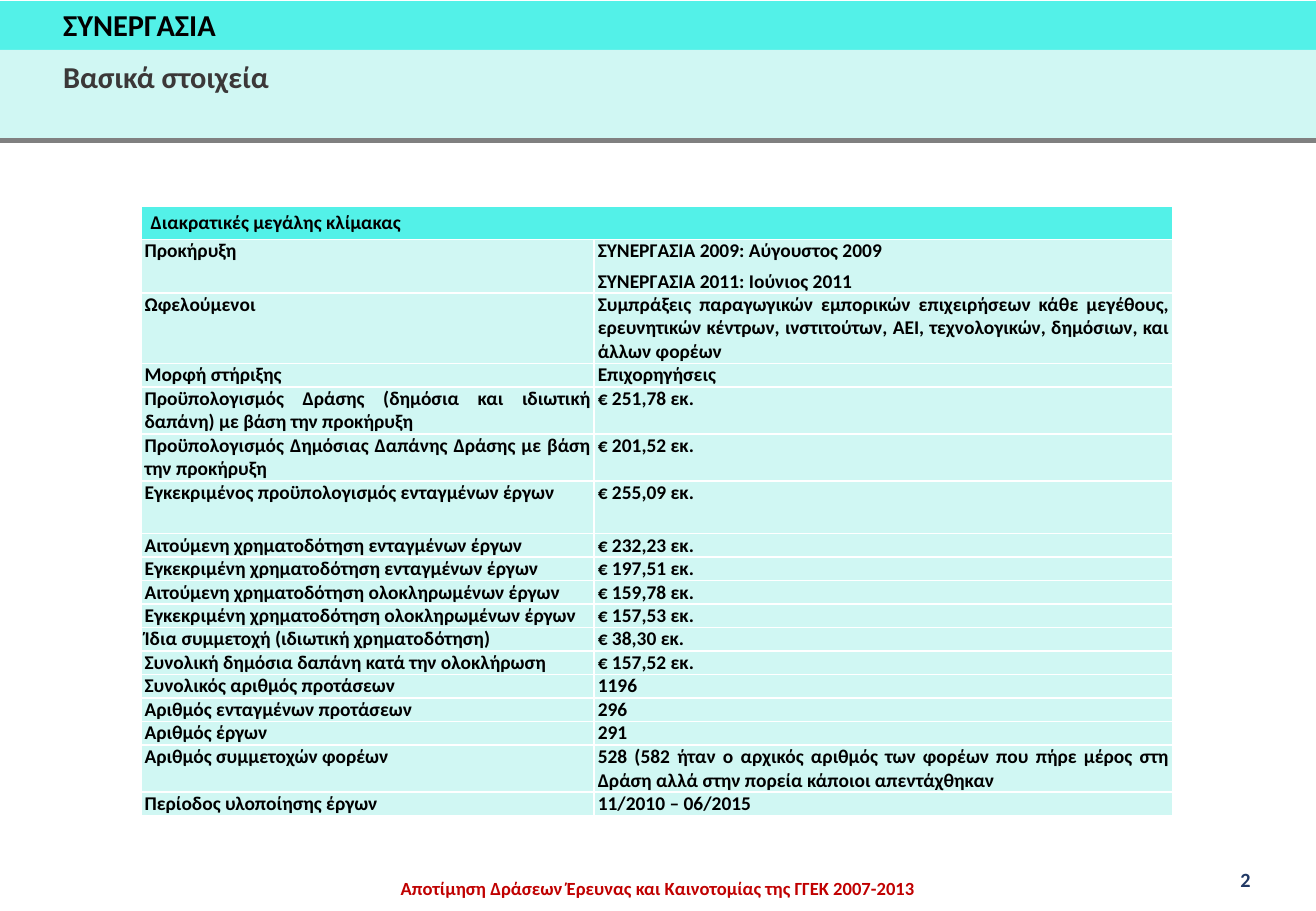
from dataclasses import dataclass

from lxml import etree
from pptx import Presentation
from pptx import util as u
from pptx.dml.color import RGBColor
from pptx.enum import shapes, text
from pptx.oxml.ns import qn


@dataclass(frozen=True)
class Theme:
    """Colours, type sizes and font of the slide."""
    font: str = "Calibri"
    strong: str = "53F1E8"
    pale: str = "D0F7F3"
    rule: str = "808080"
    border: str = "FFFFFF"
    ink: str = "000000"
    subtitle: str = "3B3838"
    footer: str = "C00000"
    number: str = "203864"
    heading_size: float = 18
    table_size: float = 11.5
    footer_size: float = 11
    number_size: float = 12


THEME = Theme()
WIDTH, HEIGHT = u.Inches(10.83), u.Inches(7.5)
LABEL_SHARE, VALUE_SHARE = 34.44, 43.95
LINE_SHARE = 2.58
TABLE_HEADING = "Διακρατικές μεγάλης κλίμακας"
FACTS = [
    ("Προκήρυξη", ["ΣΥΝΕΡΓΑΣΙΑ 2009: Αύγουστος 2009", "ΣΥΝΕΡΓΑΣΙΑ 2011: Ιούνιος 2011"], 2.25),
    ("Ωφελούμενοι", ["Συμπράξεις παραγωγικών εμπορικών επιχειρήσεων κάθε μεγέθους, ερευνητικών "
                     "κέντρων, ινστιτούτων, ΑΕΙ, τεχνολογικών, δημόσιων, και άλλων φορέων"], 3),
    ("Μορφή στήριξης", ["Επιχορηγήσεις"], 1),
    ("Προϋπολογισμός Δράσης (δημόσια και ιδιωτική δαπάνη) με βάση την προκήρυξη",
     ["€ 251,78 εκ."], 2),
    ("Προϋπολογισμός Δημόσιας Δαπάνης Δράσης με βάση την προκήρυξη", ["€ 201,52 εκ."], 2),
    ("Εγκεκριμένος προϋπολογισμός ενταγμένων έργων", ["€ 255,09 εκ."], 2.25),
    ("Αιτούμενη χρηματοδότηση ενταγμένων έργων", ["€ 232,23 εκ."], 1),
    ("Εγκεκριμένη χρηματοδότηση ενταγμένων έργων", ["€ 197,51 εκ."], 1),
    ("Αιτούμενη χρηματοδότηση ολοκληρωμένων έργων", ["€ 159,78 εκ."], 1),
    ("Εγκεκριμένη χρηματοδότηση ολοκληρωμένων έργων", ["€ 157,53 εκ."], 1),
    ("Ίδια συμμετοχή (ιδιωτική χρηματοδότηση)", ["€ 38,30 εκ."], 1),
    ("Συνολική δημόσια δαπάνη κατά την ολοκλήρωση", ["€ 157,52 εκ."], 1),
    ("Συνολικός αριθμός προτάσεων", ["1196"], 1),
    ("Αριθμός ενταγμένων προτάσεων", ["296"], 1),
    ("Αριθμός έργων", ["291"], 1),
    ("Αριθμός συμμετοχών φορέων",
     ["528 (582 ήταν ο αρχικός αριθμός των φορέων που πήρε μέρος στη Δράση "
      "αλλά στην πορεία κάποιοι απεντάχθηκαν"], 2),
    ("Περίοδος υλοποίησης έργων", ["11/2010 – 06/2015"], 1),
]


def across(share):
    """Return a percentage of the slide's width."""
    return int(WIDTH * share / 100)


def down(share):
    """Return a percentage of the slide's height."""
    return int(HEIGHT * share / 100)


def area(left, top, width, height):
    """Return a position and size given as percentages of the slide."""
    return across(left), down(top), across(width), down(height)


def write(frame, lines, size, color, align=text.PP_ALIGN.LEFT, gap=0, leading=None):
    """Fill a text frame with formatted paragraphs."""
    for index, line in enumerate(lines):
        paragraph = frame.add_paragraph() if index else frame.paragraphs[0]
        paragraph.text = line
        paragraph.alignment = align
        paragraph.space_before = u.Pt(gap if index else 0)
        paragraph.space_after = u.Pt(0)
        if leading:
            paragraph.line_spacing = u.Pt(leading)
        font = paragraph.font
        font.name, font.size, font.bold = THEME.font, u.Pt(size), True
        font.color.rgb = RGBColor.from_string(color)


def add_band(slide, place, color):
    """Draw a plain band across the slide."""
    band = slide.shapes.add_shape(shapes.MSO_SHAPE.RECTANGLE, *place)
    band.shadow.inherit = False
    band.fill.solid()
    band.fill.fore_color.rgb = RGBColor.from_string(color)
    band.line.fill.background()


def add_rule(slide, top):
    """Draw the rule that closes the heading."""
    rule = slide.shapes.add_connector(shapes.MSO_CONNECTOR.STRAIGHT, 0, down(top), WIDTH, down(top))
    rule.line.color.rgb = RGBColor.from_string(THEME.rule)
    rule.line.width = u.Pt(3)
    etree.SubElement(rule.element.spPr, qn("a:effectLst"))


def set_heading(placeholder, place, line, color, wrap):
    """Move a placeholder in front of the bands and fill it."""
    placeholder.left, placeholder.top, placeholder.width, placeholder.height = place
    frame = placeholder.text_frame
    frame.auto_size = text.MSO_AUTO_SIZE.NONE
    frame.vertical_anchor = text.MSO_ANCHOR.TOP
    frame.word_wrap = wrap
    write(frame, [line], THEME.heading_size, color)
    placeholder.element.getparent().append(placeholder.element)


def add_label(slide, place, line, inset=None, **style):
    """Add a text box with one line."""
    frame = slide.shapes.add_textbox(*place).text_frame
    frame.word_wrap = True
    if inset is not None:
        frame.margin_left = frame.margin_right = frame.margin_top = frame.margin_bottom = inset
    write(frame, [line], **style)


def fill_cell(cell, lines, color, inset, align):
    """Give a table cell its text, margins, borders and fill."""
    cell.margin_left = cell.margin_right = u.Inches(inset[0])
    cell.margin_top = cell.margin_bottom = u.Inches(inset[1])
    properties = cell._tc.get_or_add_tcPr()
    for side in ("lnL", "lnR", "lnT", "lnB"):
        border = etree.SubElement(properties, qn(f"a:{side}"), w=str(u.Pt(1)))
        paint = etree.SubElement(border, qn("a:solidFill"))
        etree.SubElement(paint, qn("a:srgbClr"), val=THEME.border)
    cell.fill.solid()
    cell.fill.fore_color.rgb = RGBColor.from_string(color)
    write(cell.text_frame, lines, THEME.table_size, THEME.ink, align=align, gap=4)


def add_facts(slide):
    """Add the table of programme facts under its merged heading."""
    place = area(10.71, 22.67, LABEL_SHARE + VALUE_SHARE, 66.4)
    table = slide.shapes.add_table(len(FACTS) + 1, 2, *place).table
    table.first_row = table.horz_banding = False
    for column, share in zip(table.columns, (LABEL_SHARE, VALUE_SHARE)):
        column.width = across(share)
    table.rows[0].height = down(3.6)
    table.cell(0, 0).merge(table.cell(0, 1))
    fill_cell(table.cell(0, 0), [TABLE_HEADING], THEME.strong, (0.08, 0.04), text.PP_ALIGN.LEFT)
    for row, (label, values, lines) in enumerate(FACTS, 1):
        table.rows[row].height = down(lines * LINE_SHARE)
        for column, content in enumerate(([label], values)):
            fill_cell(table.cell(row, column), content, THEME.pale, (0.03, 0),
                      text.PP_ALIGN.JUSTIFY)


def main():
    """Build the slide and save it."""
    deck = Presentation()
    deck.slide_width, deck.slide_height = WIDTH, HEIGHT
    slide = deck.slides.add_slide(deck.slide_layouts[2])
    title, subtitle = slide.placeholders
    add_label(slide, area(26.04, 94, 47.92, 5.07),
              "Aποτίμηση Δράσεων Έρευνας και Καινοτομίας της ΓΓΕΚ 2007-2013", inset=0,
              size=THEME.footer_size, color=THEME.footer, align=text.PP_ALIGN.CENTER, leading=25.3)
    add_label(slide, area(93.35, 94.53, 4.8, 4), "2", size=THEME.number_size, color=THEME.number)
    add_band(slide, area(0, 0.13, 100, 5.34), THEME.strong)
    add_band(slide, area(0, 5.47, 100, 10), THEME.pale)
    add_rule(slide, 15.47)
    add_facts(slide)
    set_heading(subtitle, area(3.88, 5.73, 54.48, 5.33), "Βασικά στοιχεία", THEME.subtitle, True)
    set_heading(title, area(3.88, 0, 13.57, 5.33), "ΣΥΝΕΡΓΑΣΙΑ", THEME.ink, False)
    deck.save("out.pptx")


if __name__ == "__main__":
    main()
